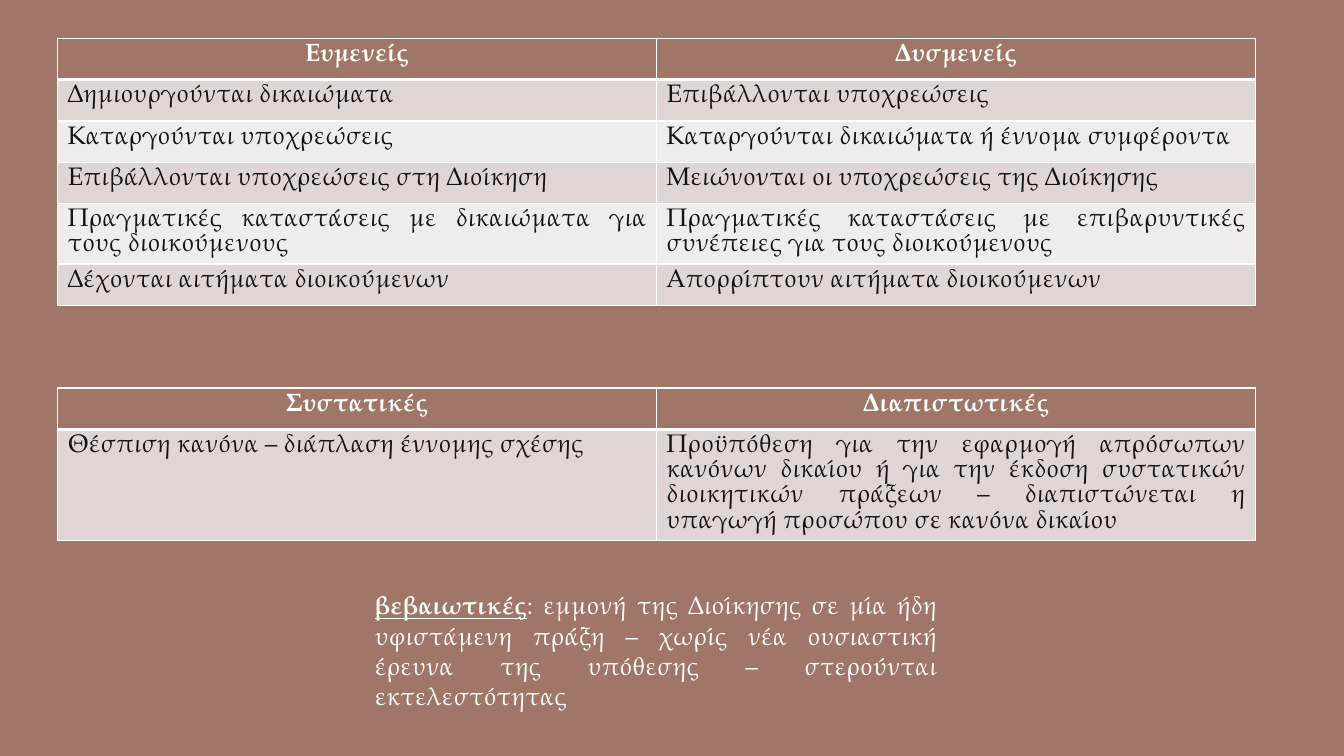
from lxml import etree
from pptx import Presentation
from pptx.dml.color import RGBColor
from pptx.enum.text import MSO_AUTO_SIZE, PP_ALIGN
from pptx.oxml.ns import qn
from pptx.util import Inches, Pt

COLORS = {"brown": "9F7667", "dark_band": "DFD6D3", "light_band": "F0ECEB",
          "ink": "131313", "white": "FFFFFF"}
FONT = "TeX Gyre Pagella"
ROW_HEIGHT = 0.41

EFFECTS = [
    ("Ευμενείς", "Δυσμενείς"),
    ("Δημιουργούνται δικαιώματα", "Επιβάλλονται υποχρεώσεις"),
    ("Καταργούνται υποχρεώσεις", "Καταργούνται δικαιώματα ή έννομα συμφέροντα"),
    ("Επιβάλλονται υποχρεώσεις στη Διοίκηση",
     "Μειώνονται οι υποχρεώσεις της Διοίκησης"),
    ("Πραγματικές καταστάσεις με δικαιώματα για τους διοικούμενους",
     "Πραγματικές καταστάσεις με επιβαρυντικές συνέπειες για τους διοικούμενους"),
    ("Δέχονται αιτήματα διοικούμενων", "Απορρίπτουν αιτήματα διοικούμενων"),
]
CONTENTS = [
    ("Συστατικές", "Διαπιστωτικές"),
    ("Θέσπιση κανόνα – διάπλαση έννομης σχέσης",
     "Προϋπόθεση για την εφαρμογή απρόσωπων κανόνων δικαίου ή για την έκδοση "
     "συστατικών διοικητικών πράξεων – διαπιστώνεται η υπαγωγή προσώπου σε "
     "κανόνα δικαίου"),
]
CONFIRMING = [
    ("βεβαιωτικές", {"bold": True, "underline": True}),
    (": εμμονή της Διοίκησης σε μία ήδη υφιστάμενη πράξη – χωρίς νέα ουσιαστική "
     "έρευνα της υπόθεσης – στερούνται εκτελεστότητας", {}),
]


def rgb(name):
    return RGBColor.from_string(COLORS[name])


def add_run(p, text, color, **styles):
    r = p.add_run()
    r.text = text
    for name, value in {"name": FONT, "size": Pt(18), **styles}.items():
        setattr(r.font, name, value)
    r.font.color.rgb = rgb(color)


def set_borders(cell, widths):
    """Draw white cell borders; widths maps a side (L, R, T, B) to points."""
    tc_pr = cell._tc.get_or_add_tcPr()
    for i, (side, width) in enumerate(widths.items()):
        line = etree.Element(qn(f"a:ln{side}"), w=str(Pt(width)))
        fill = etree.SubElement(line, qn("a:solidFill"))
        etree.SubElement(fill, qn("a:srgbClr"), val=COLORS["white"])
        tc_pr.insert(i, line)


def add_comparison(s, rows, left, top, width, tall_rows):
    """Add a two-column table; tall_rows maps a row index to its height."""
    heights = [tall_rows.get(i, ROW_HEIGHT) for i in range(len(rows))]
    table = s.shapes.add_table(len(rows), 2, Inches(left), Inches(top),
                               Inches(width), Inches(sum(heights))).table
    for i, texts in enumerate(rows):
        table.rows[i].height = Inches(heights[i])
        header = i == 0
        band = "brown" if header else "dark_band" if i % 2 else "light_band"
        for j, text in enumerate(texts):
            cell = table.cell(i, j)
            cell.fill.solid()
            cell.fill.fore_color.rgb = rgb(band)
            set_borders(cell, {"L": 1, "R": 1, "T": 3 if i == 1 else 1,
                               "B": 3 if header else 1})
            p = cell.text_frame.paragraphs[0]
            p.alignment = PP_ALIGN.CENTER if header else PP_ALIGN.JUSTIFY
            p.line_spacing = Pt(18)
            add_run(p, text, "white" if header else "ink", bold=header)


def add_note(s, parts, left, top, width, height):
    tf = s.shapes.add_textbox(Inches(left), Inches(top), Inches(width),
                              Inches(height)).text_frame
    tf.word_wrap = True
    tf.auto_size = MSO_AUTO_SIZE.SHAPE_TO_FIT_TEXT
    p = tf.paragraphs[0]
    p.alignment = PP_ALIGN.JUSTIFY
    for text, styles in parts:
        add_run(p, text, "white", **styles)


def main():
    prs = Presentation()
    prs.slide_width, prs.slide_height = Inches(13.33), Inches(7.5)
    s = prs.slides.add_slide(prs.slide_layouts[6])
    s.background.fill.solid()
    s.background.fill.fore_color.rgb = rgb("brown")
    add_comparison(s, EFFECTS, 0.57, 0.38, 11.88, {4: 0.6})
    add_comparison(s, CONTENTS, 0.57, 3.85, 11.88, {1: 1.1})
    add_note(s, CONFIRMING, 3.62, 5.8, 5.77, 1.01)
    prs.save("out.pptx")


if __name__ == "__main__":
    main()
